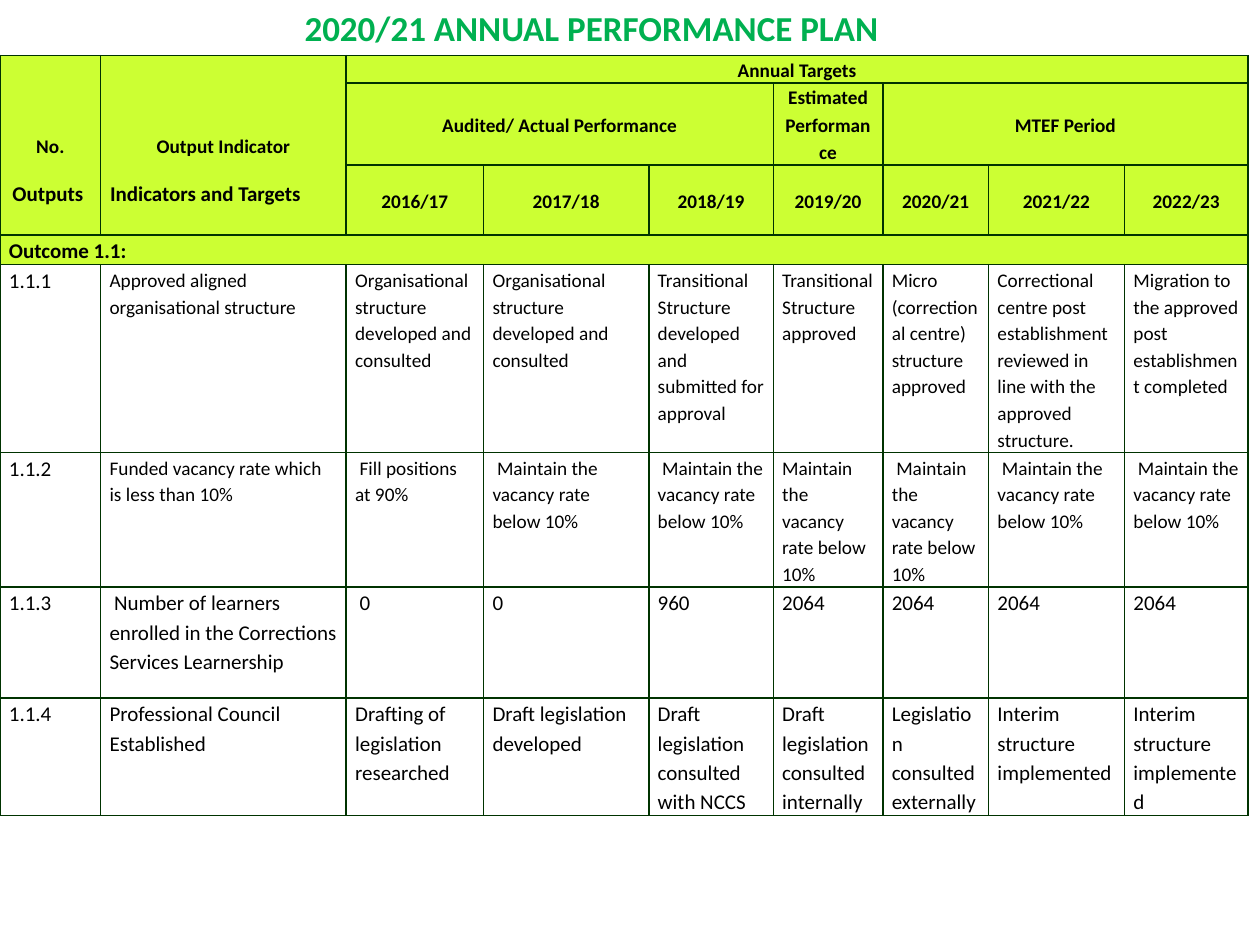
"""Build the 2020/21 annual performance plan slide."""
from dataclasses import dataclass

from lxml import etree
from pptx import Presentation
from pptx import util as u
from pptx.dml.color import RGBColor
from pptx.enum import text
from pptx.oxml.ns import qn

COLORS = {"title": "00B050", "header": "CCFF33", "border": "003300", "text": "000000"}
FONT = "Calibri"
COLS = (2.03, 4.95, 2.77, 3.33, 2.51, 2.21, 2.13, 2.74, 2.49)
ROWS = (0.48, 1.52, 1.42, 0.53, 3.07, 2.57, 2.24, 2.24)
BODY_START = 4
NBSP_INDENT = 0.09


@dataclass(frozen=True)
class Style:
    size: float
    bold: bool = False
    centered: bool = False
    spacing: float | u.Pt = 1.15
    top: float = 0
    fill: str | None = None


@dataclass(frozen=True)
class Header:
    row: int
    col: int
    label: str
    rows: int = 1
    cols: int = 1


HEAD = Style(11, bold=True, centered=True, fill="header")
OUTCOME = Style(12, bold=True, fill="header")
LARGE = Style(12)
SMALL = Style(11, spacing=u.Pt(15.2), top=0.03)

HEADERS = [
    Header(0, 0, "No.", rows=3),
    Header(0, 1, "Output Indicator", rows=3),
    Header(0, 2, "Annual Targets", cols=7),
    Header(1, 2, "Audited/ Actual Performance", cols=3),
    Header(1, 5, "Estimated Performance"),
    Header(1, 6, "MTEF Period", cols=3),
    *(Header(2, i + 2, f"{2016 + i}/{17 + i}") for i in range(7)),
]

VACANCY = "Maintain the vacancy rate below 10%"
INDICATORS = [
    (SMALL, ("1.1.1", "Approved aligned organisational structure",
             *["Organisational structure developed and consulted"] * 2,
             "Transitional Structure developed and submitted for approval",
             "Transitional Structure approved",
             "Micro (correctional centre) structure approved",
             "Correctional centre post establishment reviewed in line with "
             "the approved structure.",
             "Migration to the approved post establishment completed")),
    (SMALL, ("1.1.2", "Funded vacancy rate which is less than 10%",
             " Fill positions at 90%", *[" " + VACANCY] * 2, VACANCY,
             *[" " + VACANCY] * 3)),
    (LARGE, ("1.1.3",
             " Number of learners enrolled in the Corrections Services Learnership",
             " 0", "0", "960", *["2064"] * 4)),
    (LARGE, ("1.1.4", "Professional Council Established",
             "Drafting of legislation researched", "Draft legislation\ndeveloped",
             "Draft legislation consulted with NCCS",
             "Draft legislation consulted internally",
             "Legislation consulted externally",
             *["Interim structure implemented"] * 2)),
]


def set_font(p, size: float, bold: bool, color: str = "text") -> None:
    """Set the shared font of a paragraph."""
    p.font.name = FONT
    p.font.size = u.Pt(size)
    p.font.bold = bold
    p.font.color.rgb = RGBColor.from_string(COLORS[color])


def add_borders(cell) -> None:
    """Draw a one-point line on every side of a cell."""
    tc_pr = cell._tc.get_or_add_tcPr()
    for side in ("lnL", "lnR", "lnT", "lnB"):
        ln = etree.SubElement(tc_pr, qn(f"a:{side}"), w=str(u.Pt(1)))
        fill = etree.SubElement(ln, qn("a:solidFill"))
        etree.SubElement(fill, qn("a:srgbClr"), val=COLORS["border"])


def fill_cell(cell, label: str, style: Style) -> None:
    """Write a label into a cell in the given style."""
    cell.margin_left = cell.margin_right = u.Cm(0.18)
    cell.margin_top, cell.margin_bottom = u.Cm(style.top), 0
    if style.centered:
        cell.vertical_anchor = text.MSO_ANCHOR.MIDDLE
    tf = cell.text_frame
    tf.text = label.strip()
    for p in tf.paragraphs:
        p.line_spacing = style.spacing
        if style.centered:
            p.alignment = text.PP_ALIGN.CENTER
        if label.startswith(" "):
            p._p.get_or_add_pPr().set("indent", str(u.Cm(NBSP_INDENT)))
        set_font(p, style.size, style.bold)


def add_plan_table(s) -> None:
    """Add the table of indicators and targets."""
    tbl = s.shapes.add_table(len(ROWS), len(COLS), 0, u.Cm(1.12),
                             u.Cm(sum(COLS)), u.Cm(sum(ROWS))).table
    tbl.first_row = tbl.horz_banding = False
    for col, width in zip(tbl.columns, COLS):
        col.width = u.Cm(width)
    for i, (row, height) in enumerate(zip(tbl.rows, ROWS)):
        row.height = u.Cm(height)
        for cell in row.cells:
            add_borders(cell)
            if i < BODY_START:
                cell.fill.solid()
                cell.fill.fore_color.rgb = RGBColor.from_string(COLORS[HEAD.fill])
            else:
                cell.fill.background()

    outcome = Header(3, 0, "Outcome 1.1:", cols=len(COLS))
    for h in [*HEADERS, outcome]:
        cell = tbl.cell(h.row, h.col)
        if h.rows * h.cols > 1:
            cell.merge(tbl.cell(h.row + h.rows - 1, h.col + h.cols - 1))
        fill_cell(cell, h.label, OUTCOME if h is outcome else HEAD)
    for i, (style, labels) in enumerate(INDICATORS, BODY_START):
        for j, label in enumerate(labels):
            fill_cell(tbl.cell(i, j), label, style if j else LARGE)


def add_label(s, left: float, top: float, width: float, height: float, label: str):
    """Add a wrapping text box and return its paragraph."""
    sp = s.shapes.add_textbox(u.Cm(left), u.Cm(top), u.Cm(width), u.Cm(height))
    tf = sp.text_frame
    tf.word_wrap = True
    tf.auto_size = text.MSO_AUTO_SIZE.SHAPE_TO_FIT_TEXT
    tf.vertical_anchor = text.MSO_ANCHOR.MIDDLE
    p = tf.paragraphs[0]
    p.add_run().text = label
    return p


def main() -> None:
    """Build and save the slide."""
    prs = Presentation()
    prs.slide_width, prs.slide_height = u.Cm(25.4), u.Cm(19.05)
    s = prs.slides.add_slide(prs.slide_layouts[6])
    add_plan_table(s)

    p = add_label(s, 0, 3.51, 6.58, 0.77, "Outputs\tIndicators and Targets")
    tabs = etree.SubElement(p._p.get_or_add_pPr(), qn("a:tabLst"))
    etree.SubElement(tabs, qn("a:tab"), pos=str(u.Cm(1.97)), algn="l")
    set_font(p, 12, True)

    p = add_label(s, 1.27, 0, 22.86, 1.11, "2020/21 ANNUAL PERFORMANCE PLAN")
    p._p.get_or_add_pPr().set("marL", str(u.Cm(4.62)))
    set_font(p, 20, True, "title")
    prs.save("out.pptx")


if __name__ == "__main__":
    main()
